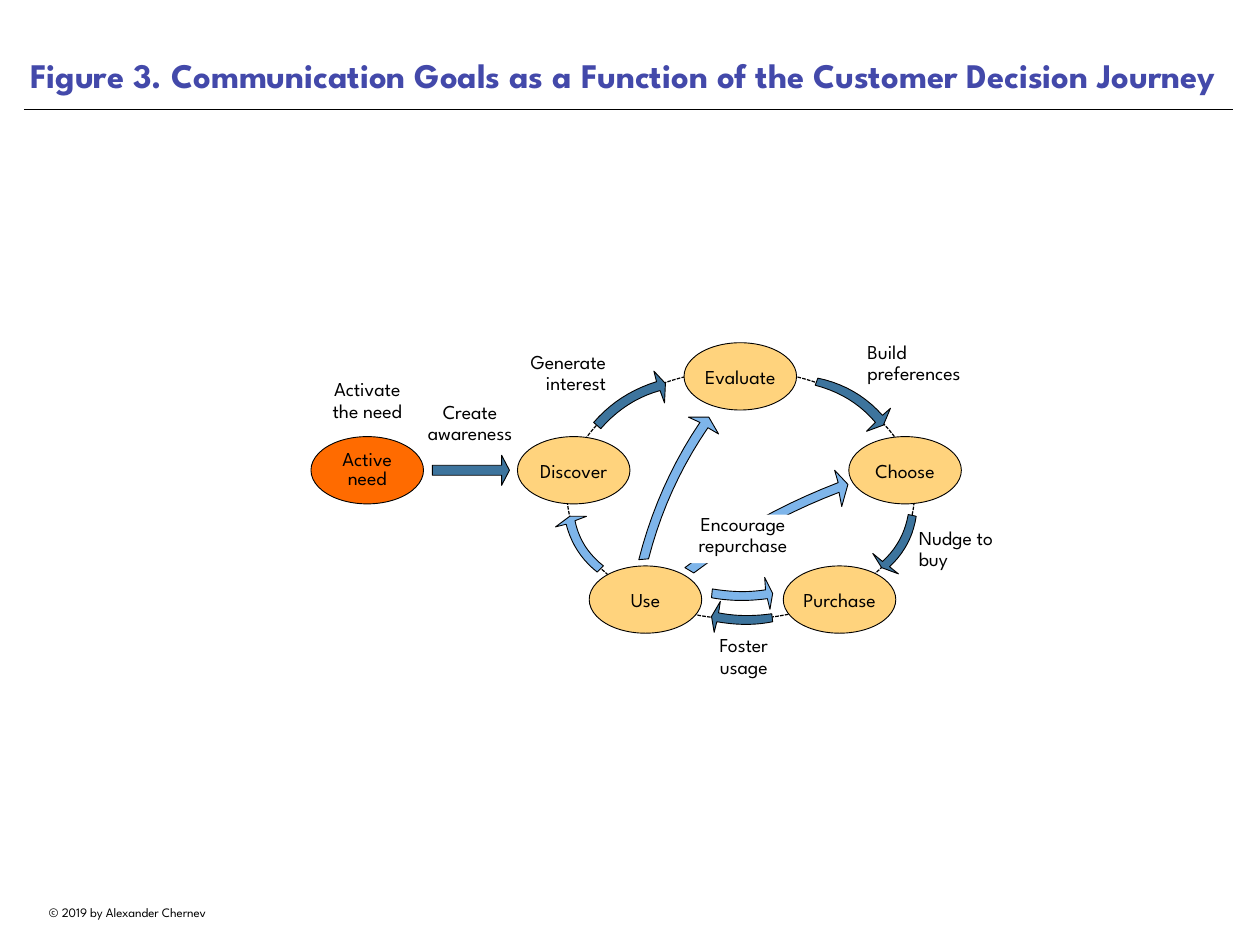
from pptx import Presentation
from pptx.dml.color import RGBColor
from pptx.enum.dml import MSO_LINE
from pptx.enum.shapes import MSO_CONNECTOR, MSO_SHAPE
from pptx.enum.text import MSO_ANCHOR, PP_ALIGN
from pptx.oxml.ns import qn
from pptx.util import Cm, Pt
from lxml import etree

BLACK = RGBColor(0, 0, 0)
WHITE = RGBColor(255, 255, 255)
INDIGO = RGBColor(0x43, 0x49, 0xAA)
SAND = RGBColor(0xFF, 0xD3, 0x7D)
ORANGE = RGBColor(0xFF, 0x6B, 0x00)
STEEL = RGBColor(0x3D, 0x74, 0x9D)
SKY = RGBColor(0x7E, 0xB5, 0xEA)
FONT = "League Spartan"
LEFT, CENTER, RIGHT = PP_ALIGN.LEFT, PP_ALIGN.CENTER, PP_ALIGN.RIGHT
TOP, MIDDLE, BOTTOM = MSO_ANCHOR.TOP, MSO_ANCHOR.MIDDLE, MSO_ANCHOR.BOTTOM
OVAL, RECT, ARROW = MSO_SHAPE.OVAL, MSO_SHAPE.RECTANGLE, MSO_SHAPE.RIGHT_ARROW
STRAIGHT = MSO_CONNECTOR.STRAIGHT
DASH = MSO_LINE.SQUARE_DOT
INCH = 2.54
STEPS = 10

STAGES = [
    ("Purchase", 8.84, 6.39, SAND),
    ("Evaluate", 7.72, 3.87, SAND),
    ("Choose", 9.58, 4.93, SAND),
    ("Use", 6.65, 6.39, SAND),
    ("Discover", 5.84, 4.93, SAND),
    ("Active need", 3.51, 4.93, ORANGE),
]

# Each bend: head (five points), outer middle, outer tail, inner tail, inner middle.
BENDS = [
    (STEEL, [(7.45, 4.41), (7.5, 4.55), (7.51, 4.33), (7.38, 4.19), (7.41, 4.31),
             (7.02, 4.49), (6.7, 4.77), (6.78, 4.84), (7.09, 4.57)]),
    (STEEL, [(9.88, 4.77), (9.78, 4.87), (9.97, 4.8), (10.05, 4.61), (9.96, 4.69),
             (9.63, 4.42), (9.23, 4.27), (9.2, 4.35), (9.58, 4.51)]),
    (STEEL, [(9.96, 6.34), (9.85, 6.25), (9.95, 6.41), (10.14, 6.48), (10.04, 6.4),
             (10.24, 6.14), (10.34, 5.83), (10.25, 5.81), (10.15, 6.1)]),
    (SKY, [(6.49, 5.88), (6.62, 5.83), (6.43, 5.83), (6.27, 5.95), (6.39, 5.92),
           (6.52, 6.22), (6.74, 6.46), (6.81, 6.39), (6.6, 6.16)]),
    (STEEL, [(8.11, 6.92), (8.13, 6.79), (8.03, 6.96), (8.06, 7.14), (8.09, 7.02),
             (8.42, 7.05), (8.72, 7.02), (8.71, 6.93), (8.4, 6.95)]),
    (SKY, [(8.64, 6.66), (8.63, 6.52), (8.72, 6.7), (8.69, 6.88), (8.66, 6.76),
           (8.34, 6.78), (8.03, 6.75), (8.04, 6.65), (8.35, 6.68)]),
    (SKY, [(7.99, 4.83), (8.11, 4.9), (8, 4.71), (7.77, 4.71), (7.9, 4.77),
           (7.49, 5.51), (7.21, 6.32), (7.32, 6.31), (7.59, 5.54)]),
    (SKY, [(9.47, 5.56), (9.5, 5.72), (9.57, 5.47), (9.42, 5.31), (9.46, 5.45),
           (8.56, 5.87), (7.73, 6.41), (7.83, 6.47), (8.63, 5.95)]),
]

GOALS = [
    ("Generate interest", 5.54, 3.98, 1.3, RIGHT),
    ("Build preferences", 9.79, 3.87, 1.3, LEFT),
    ("Nudge to buy", 10.37, 5.97, 0.93, LEFT),
    ("Foster usage", 7.93, 7.18, 0.93, CENTER),
    ("Activate the need", 3.62, 4.29, 1.05, CENTER),
    ("Create awareness", 4.71, 4.54, 1.19, CENTER),
]


def scale(*nums):
    return [Cm(num * INCH) for num in nums]


def write(shape, text, size=16, color=BLACK, bold=False, align=CENTER,
          anchor=TOP, inset=0, space=0.9, wrap=True):
    frame = shape.text_frame
    frame.word_wrap = wrap
    frame.vertical_anchor = anchor
    edge = Cm(inset)
    frame.margin_left = frame.margin_right = edge
    frame.margin_top = frame.margin_bottom = edge
    para = frame.paragraphs[0]
    para.alignment = align
    para.line_spacing = space
    run = para.add_run()
    run.text = text
    font = run.font
    font.name, font.size, font.bold = FONT, Pt(size), bold
    font.color.rgb = color


def paint(shape, fill=None, width=0.75):
    shape.shadow.inherit = False
    if fill is None:
        shape.fill.background()
    else:
        shape.fill.solid()
        shape.fill.fore_color.rgb = fill
    if width:
        shape.line.color.rgb = BLACK
        shape.line.width = Pt(width)
    else:
        shape.line.fill.background()
    return shape


def draw(slide, kind, box, **look):
    return paint(slide.shapes.add_shape(kind, *scale(*box)), **look)


def label(slide, text, box, **form):
    write(slide.shapes.add_textbox(*scale(*box)), text, **form)


def rule(slide, left, right, top):
    line = slide.shapes.add_connector(STRAIGHT, *scale(left, top, right, top))
    line.line.color.rgb = BLACK
    line.line.width = Pt(0.5)
    etree.SubElement(line._element.spPr, qn("a:effectLst"))


def curve(start, mid, end):
    for step in range(1, STEPS + 1):
        t = step / STEPS
        parts = (1 - t) * (1 - 2 * t), 4 * t * (1 - t), t * (2 * t - 1)
        yield tuple(sum(part * num for part, num in zip(parts, nums))
                    for nums in zip(start, mid, end))


def bend(slide, fill, points):
    head, (outer, tail, inner, middle) = points[:5], points[5:]
    path = [*head, *curve(head[4], outer, tail), inner,
            *curve(inner, middle, head[0])]
    spots = [scale(*spot) for spot in path]
    pen = slide.shapes.build_freeform(*spots[0])
    pen.add_line_segments(spots[1:], close=True)
    paint(pen.convert_to_shape(), fill=fill)


def main():
    deck = Presentation()
    deck.slide_width, deck.slide_height = scale(14.22, 10.67)
    slide = deck.slides.add_slide(deck.slide_layouts[6])

    label(slide, "© 2019 by Alexander Chernev", (0.27, 10.16, 2.34, 0.28),
          size=10.5, inset=0.13, space=1, wrap=False)
    rule(slide, 0.27, 13.92, 1.24)
    label(slide, "Figure 3. Communication Goals as a Function of the Customer Decision Journey",
          (0.27, 0, 13.64, 1.15), size=28, color=INDIGO, bold=True,
          align=LEFT, anchor=BOTTOM, inset=0.18, space=1)

    ring = draw(slide, OVAL, (6.4, 4.18, 3.92, 2.81), width=1)
    ring.line.dash_style = DASH
    for text, left, top, fill in STAGES:
        stage = draw(slide, OVAL, (left, top, 1.27, 0.76), fill=fill)
        write(stage, text, anchor=MIDDLE, space=0.8 if " " in text else 1)
    arrow = draw(slide, ARROW, (4.88, 5.14, 0.87, 0.34), fill=STEEL)
    arrow.adjustments[0], arrow.adjustments[1] = 0.33, 0.26
    for fill, points in BENDS:
        bend(slide, fill, points)
    for text, left, top, width, align in GOALS:
        label(slide, text, (left, top, width, 0.55), align=align)
    repeat = draw(slide, RECT, (7.75, 5.81, 1.27, 0.55), fill=WHITE, width=0)
    write(repeat, "Encourage repurchase")
    deck.save("out.pptx")


if __name__ == "__main__":
    main()
